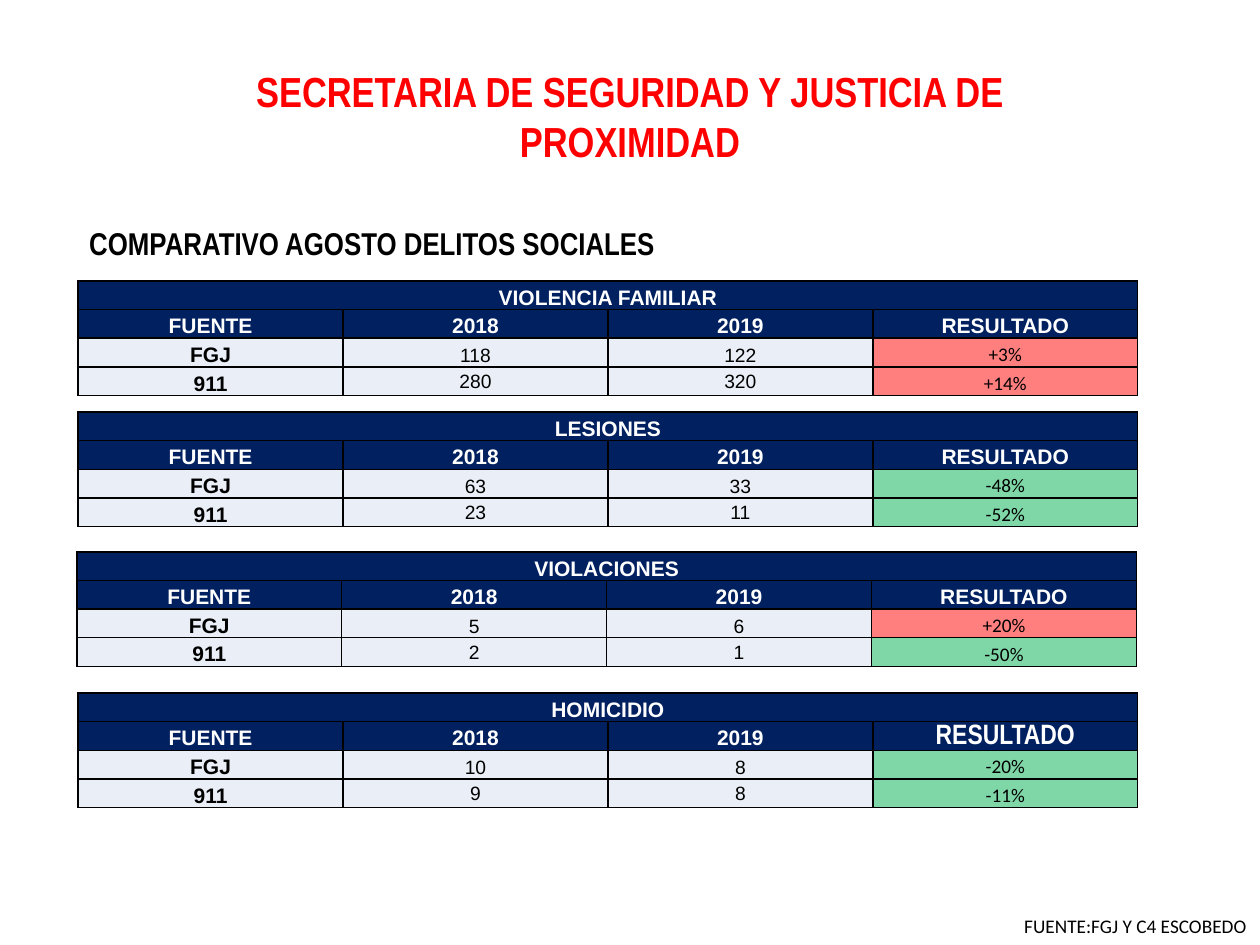
from lxml import etree
from pptx import Presentation
from pptx.dml.color import RGBColor
from pptx.enum import text
from pptx.oxml.ns import qn
from pptx.util import Inches, Pt

THEME = {
    "title": ("Arial Narrow", 24, True, "FF0000"),
    "subtitle": ("Arial Narrow", 18, True, "000000"),
    "source": ("Calibri", 11, False, "000000"),
    "header": ("Arial", 12, True, "FFFFFF"),
    "large_header": ("Arial Narrow", 16, True, "FFFFFF"),
    "agency": ("Arial", 12, True, "000000"),
    "count": ("Arial", 11, False, "000000"),
    "result": ("Calibri", 11, False, "000000"),
    "navy": "002060",
    "pale": "EAEFF7",
    "rise": "FF0000",
    "fall": "00B050",
    "border": "000000",
}

deck = Presentation()
deck.slide_width, deck.slide_height = Inches(10), Inches(7.5)
slide = deck.slides.add_slide(deck.slide_layouts[6])
COL, ROW = deck.slide_width / 100, deck.slide_height / 75


def write(frame, wording, style, align):
    frame.text = wording
    paragraph = frame.paragraphs[0]
    paragraph.alignment = align
    font = paragraph.runs[0].font
    font.name, size, font.bold, color = THEME[style]
    font.size = Pt(size)
    font.color.rgb = RGBColor.from_string(color)


def paint(cell, color, alpha=None):
    cell.fill.solid()
    cell.fill.fore_color.rgb = RGBColor.from_string(THEME[color])
    props = cell._tc.get_or_add_tcPr()
    if alpha:
        tint = props.find(qn("a:solidFill"))[0]
        etree.SubElement(tint, qn("a:alpha"), val=str(alpha * 1000))
    for place, side in enumerate(("lnL", "lnR", "lnT", "lnB")):
        line = etree.Element(qn(f"a:{side}"), w=str(Pt(1)))
        ink = etree.SubElement(line, qn("a:solidFill"))
        etree.SubElement(ink, qn("a:srgbClr"), val=THEME["border"])
        props.insert(place, line)


CENTER, LEFT = text.PP_ALIGN.CENTER, text.PP_ALIGN.LEFT
HEADINGS = ("FUENTE", "2018", "2019", "RESULTADO")
crimes = [
    (6.2, 22.3, "VIOLENCIA FAMILIAR", ("FGJ", "118", "122", "+3%"), ("911", "280", "320", "+14%")),
    (6.2, 32.7, "LESIONES", ("FGJ", "63", "33", "-48%"), ("911", "23", "11", "-52%")),
    (6.1, 43.8, "VIOLACIONES", ("FGJ", "5", "6", "+20%"), ("911", "2", "1", "-50%")),
    (6.2, 55, "HOMICIDIO", ("FGJ", "10", "8", "-20%"), ("911", "9", "8", "-11%")),
]

for left, top, crime, *agencies in crimes:
    comparison = slide.shapes.add_table(
        4, 4, int(left * COL), int(top * ROW), int(84.1 * COL), int(9.1 * ROW)
    ).table
    for row in comparison.rows:
        row.height = int(9.1 * ROW / 4)
    comparison.cell(0, 0).merge(comparison.cell(0, 3))
    for r, entries in enumerate([(crime, "", "", ""), HEADINGS, *agencies]):
        for c, entry in enumerate(entries):
            cell = comparison.cell(r, c)
            cell.margin_left = cell.margin_right = cell.margin_top = int(0.1 * COL)
            cell.margin_bottom = 0
            middle = r == 3 and c in (1, 2)
            cell.vertical_anchor = text.MSO_ANCHOR.MIDDLE if middle else text.MSO_ANCHOR.BOTTOM
            if r < 2:
                paint(cell, "navy")
                style = "large_header" if crime == "HOMICIDIO" and (r, c) == (1, 3) else "header"
            elif c == 3:
                paint(cell, "rise" if entry.startswith("+") else "fall", alpha=50)
                style = "result"
            else:
                paint(cell, "pale")
                style = "count" if c else "agency"
            if entry:
                write(cell.text_frame, entry, style, CENTER)

captions = [
    ("title", "SECRETARIA DE SEGURIDAD Y JUSTICIA DE PROXIMIDAD", 19, 4.7, 62, 9.1, True, CENTER),
    ("source", "FUENTE:FGJ Y C4 ESCOBEDO", 80.3, 72.1, 19.8, 2.9, False, LEFT),
    ("subtitle", "COMPARATIVO AGOSTO DELITOS SOCIALES", 6.1, 17.3, 73.8, 4, True, LEFT),
]
for style, wording, left, top, width, height, wrap, align in captions:
    caption = slide.shapes.add_textbox(
        int(left * COL), int(top * ROW), int(width * COL), int(height * ROW)
    ).text_frame
    caption.word_wrap = wrap
    caption.auto_size = text.MSO_AUTO_SIZE.SHAPE_TO_FIT_TEXT
    write(caption, wording, style, align)

deck.save("out.pptx")
